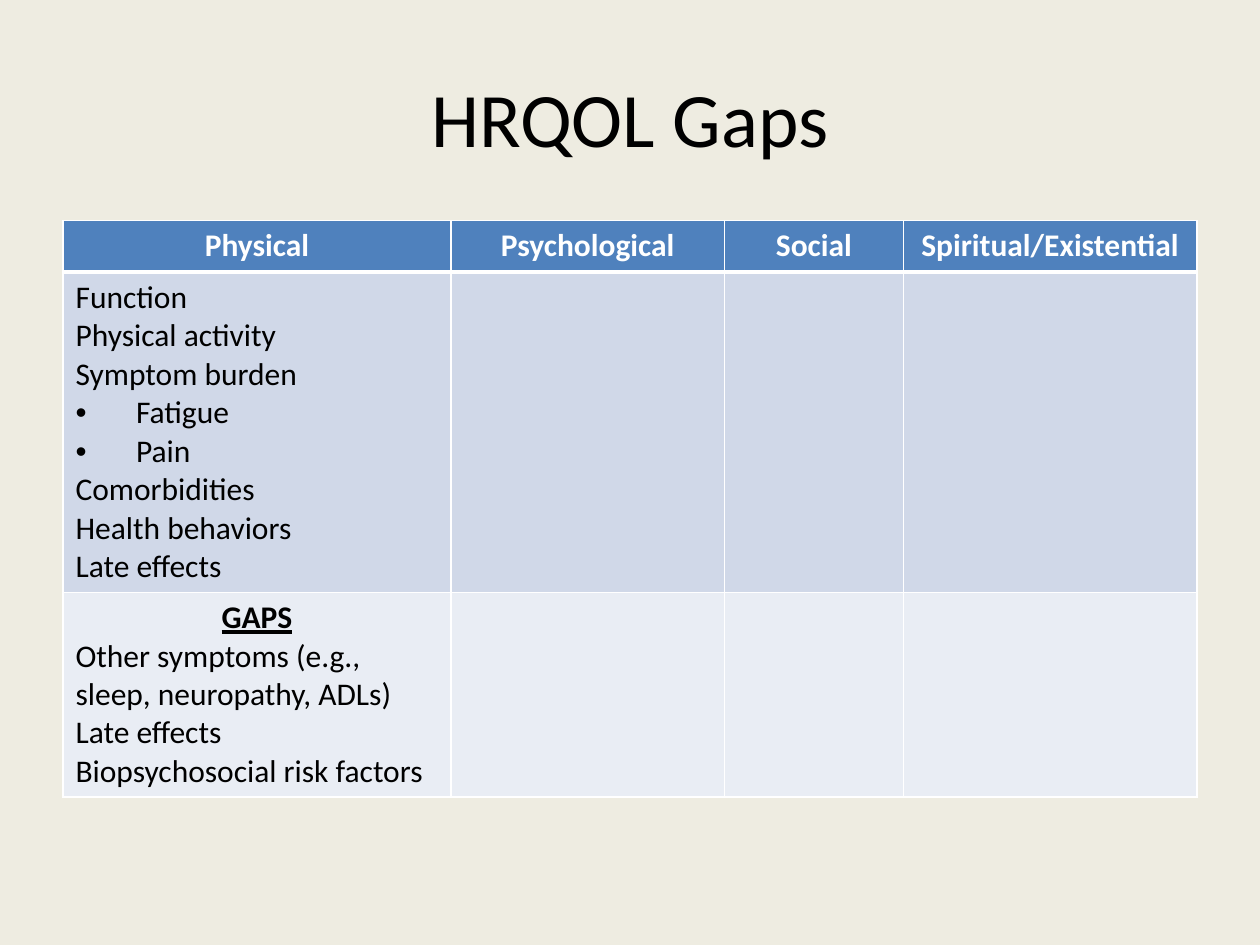
import pptx
import pptx.dml.color
import pptx.enum.text
import pptx.oxml
import pptx.oxml.ns
import pptx.util
from pptx.util import Inches

FONT = "Calibri"
BLACK, WHITE = "000000", "FFFFFF"
HEADS = ["Physical", "Psychological", "Social", "Spiritual/Existential"]
WIDTHS = [3.08, 2.17, 1.42, 2.33]
HEIGHTS = [0.41, 2.54, 1.62]
FILLS = ["4F81BD", "D0D8E8", "E9EDF4"]
TOPICS = ["Function", "Physical activity", "Symptom burden", "Fatigue", "Pain",
          "Comorbidities", "Health behaviors", "Late effects"]
SYMPTOMS = ("Fatigue", "Pain")
GAPS = ["Other symptoms (e.g., sleep, neuropathy, ADLs)", "Late effects",
        "Biopsychosocial risk factors"]


def color(code):
    return pptx.dml.color.RGBColor.from_string(code)


def write(frame, text, size=18, ink=BLACK, bold=False, line=False,
          center=False, bullet=False):
    """Fill the frame's empty first paragraph, or add one after the last."""
    para = frame.paragraphs[-1]
    if para.runs:
        para = frame.add_paragraph()
    align = pptx.enum.text.PP_ALIGN
    para.alignment = align.CENTER if center else align.LEFT
    run = para.add_run()
    run.text = text
    font = run.font
    font.name, font.size = FONT, pptx.util.Pt(size)
    font.bold, font.underline = bold, line
    font.color.rgb = color(ink)
    if bullet:
        props = para._p.get_or_add_pPr()
        props.set("marL", str(Inches(0.48)))
        props.set("indent", str(-Inches(0.48)))
        for tag, key, value in (("buFont", "typeface", "Arial"),
                                ("buChar", "char", "•")):
            props.append(pptx.oxml.parse_xml(
                f'<a:{tag} {pptx.oxml.ns.nsdecls("a")} {key}="{value}"/>'))


def edge(cell, **sides):
    """Draw white cell borders; sides map L, R, T, B to points."""
    props = cell._tc.get_or_add_tcPr()
    for i, side in enumerate("LRTB"):
        props.insert(i, pptx.oxml.parse_xml(
            f'<a:ln{side} {pptx.oxml.ns.nsdecls("a")} '
            f'w="{pptx.util.Pt(sides.get(side, 1))}"><a:solidFill>'
            f'<a:srgbClr val="{WHITE}"/></a:solidFill></a:ln{side}>'))


class Deck:
    def __init__(self):
        self.file = pptx.Presentation()
        self.file.slide_width, self.file.slide_height = Inches(10), Inches(7.5)
        self.slide = self.file.slides.add_slide(self.file.slide_layouts[5])
        fill = self.slide.background.fill
        fill.solid()
        fill.fore_color.rgb = color("EEECE1")

    def title(self, text, left, top, width, height):
        shape = self.slide.shapes.title
        shape.left, shape.top = Inches(left), Inches(top)
        shape.width, shape.height = Inches(width), Inches(height)
        frame = shape.text_frame
        frame.vertical_anchor = pptx.enum.text.MSO_ANCHOR.MIDDLE
        write(frame, text, size=44, center=True)

    def table(self, left, top):
        grid = self.slide.shapes.add_table(
            len(HEIGHTS), len(WIDTHS), Inches(left), Inches(top),
            Inches(sum(WIDTHS)), Inches(sum(HEIGHTS))).table
        for col, width in zip(grid.columns, WIDTHS):
            col.width = Inches(width)
        for r, (height, tint) in enumerate(zip(HEIGHTS, FILLS)):
            grid.rows[r].height = Inches(height)
            for cell in grid.rows[r].cells:
                cell.fill.solid()
                cell.fill.fore_color.rgb = color(tint)
                edge(cell, T=3 if r == 1 else 1, B=3 if r == 0 else 1)
        return grid


def main():
    deck = Deck()
    deck.title("HRQOL Gaps", 0.5, 0.3, 9, 1.25)
    grid = deck.table(0.5, 1.75)
    for cell, head in zip(grid.rows[0].cells, HEADS):
        write(cell.text_frame, head, ink=WHITE, bold=True, center=True)
    topics, gaps = (grid.cell(r, 0).text_frame for r in (1, 2))
    for text in TOPICS:
        write(topics, text, bullet=text in SYMPTOMS)
    write(gaps, "GAPS", bold=True, line=True, center=True)
    for text in GAPS:
        write(gaps, text)
    deck.file.save("out.pptx")


if __name__ == "__main__":
    main()
